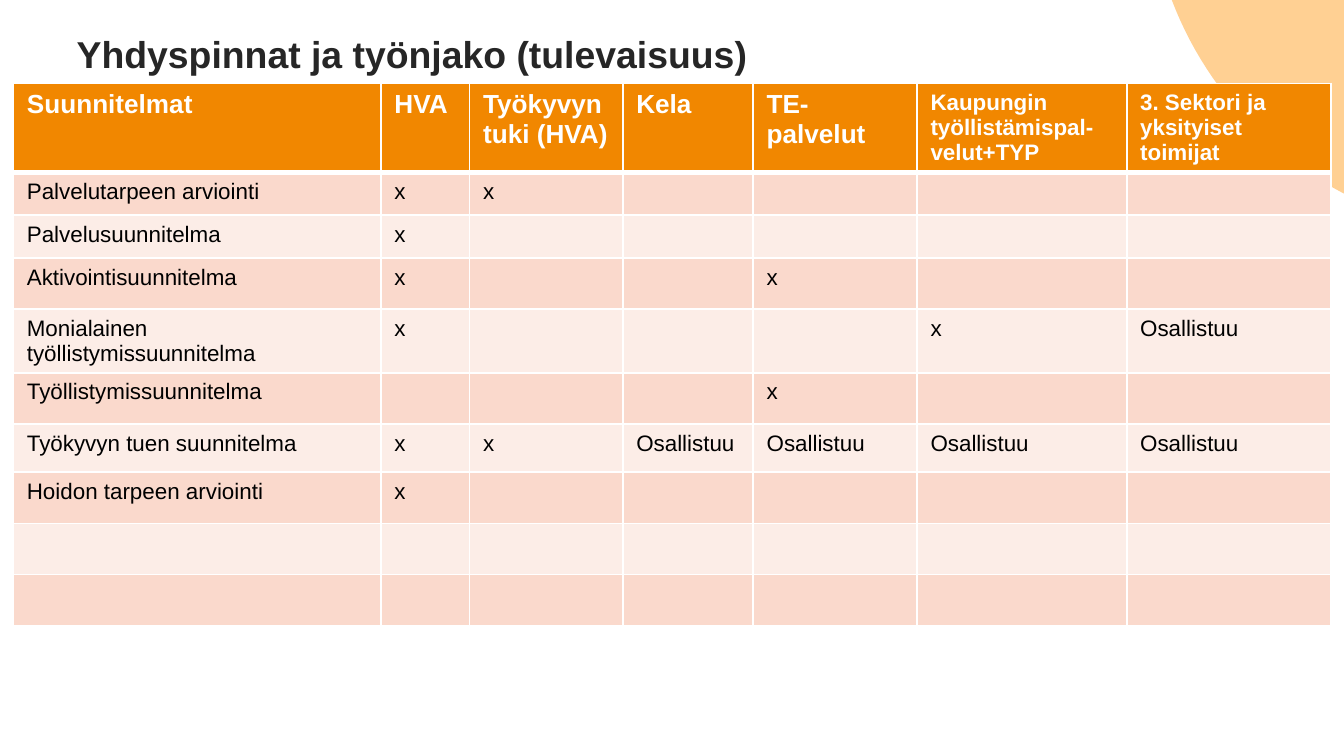
import math
from dataclasses import dataclass

import pptx
import pptx.dml.color
import pptx.enum.text
import pptx.oxml.ns
import pptx.util
from lxml import etree


@dataclass(frozen=True)
class Theme:
    font: str = "Arial"
    white: str = "FFFFFF"
    black: str = "000000"
    ink: str = "262626"
    head: str = "F18700"
    bands: tuple = ("FAD9CC", "FCEDE7")
    arc: str = "FFD093"
    title: int = 20
    large: int = 14
    body: int = 12


THEME = Theme()
COLS, ROWS = 100, 56.25  # grid units across and down a 16:9 slide
UNIT = pptx.util.Inches(0.1)

HEADS = ["Suunnitelmat", "HVA", "Työkyvyn tuki (HVA)", "Kela", "TE-palvelut",
         "Kaupungin työllistämispal-\nvelut+TYP",
         "3. Sektori ja yksityiset toimijat"]
SMALL = HEADS[5:]
JOIN = "Osallistuu"
PLANS = [
    ["Palvelutarpeen arviointi", "x", "x", "", "", "", ""],
    ["Palvelusuunnitelma", "x", "", "", "", "", ""],
    ["Aktivointisuunnitelma", "x", "", "", "x", "", ""],
    ["Monialainen työllistymissuunnitelma", "x", "", "", "", "x", JOIN],
    ["Työllistymissuunnitelma", "", "", "", "x", "", ""],
    ["Työkyvyn tuen suunnitelma", "x", "x", JOIN, JOIN, JOIN, JOIN],
    ["Hoidon tarpeen arviointi", "x", "", "", "", "", ""],
    [""] * len(HEADS),
    [""] * len(HEADS),
]
WIDTHS = [27.35, 6.6, 11.4, 9.7, 12.2, 15.6, 15.2]
HEIGHTS = [6.5, 3.2, 3.2, 3.8, 4.75, 3.8, 3.6, 3.8, 3.8, 3.8]


def grid(units):
    return round(units * UNIT)


def tint(code):
    return pptx.dml.color.RGBColor.from_string(code)


def write(frame, text, size=THEME.body, color=THEME.black, bold=False):
    frame.word_wrap = True
    for i, line in enumerate(text.split("\n")):
        para = frame.add_paragraph() if i else frame.paragraphs[0]
        para.alignment = pptx.enum.text.PP_ALIGN.LEFT
        if not line:
            # The end mark keeps an empty cell from growing its row
            etree.SubElement(para._p, pptx.oxml.ns.qn("a:endParaRPr"),
                             sz=str(size * 100))
            continue
        run = para.add_run()
        run.text = line
        run.font.name = THEME.font
        run.font.size = pptx.util.Pt(size)
        run.font.bold = bold
        run.font.color.rgb = tint(color)


def edge(cell, **sides):
    """Draw white borders; sides maps L, R, T and B to points."""
    props = cell._tc.get_or_add_tcPr()
    for side, width in sides.items():
        line = etree.SubElement(props, pptx.oxml.ns.qn(f"a:ln{side}"),
                                w=str(pptx.util.Pt(width)))
        fill = etree.SubElement(line, pptx.oxml.ns.qn("a:solidFill"))
        etree.SubElement(fill, pptx.oxml.ns.qn("a:srgbClr"), val=THEME.white)


class Page:
    def __init__(self, deck):
        self.slide = deck.slides.add_slide(deck.slide_layouts[5])
        self.shapes = self.slide.shapes

    def title(self, text, left, top, width, height):
        box = self.shapes.title
        box.left, box.top = grid(left), grid(top)
        box.width, box.height = grid(width), grid(height)
        frame = box.text_frame
        frame.vertical_anchor = pptx.enum.text.MSO_ANCHOR.BOTTOM
        write(frame, text, size=THEME.title, color=THEME.ink, bold=True)

    def arc(self, mid_x, mid_y, radius, steps=24):
        """Fill the part of a circle that shows in the top right corner."""
        first = math.pi - math.asin(-mid_y / radius)
        last = math.acos((COLS - mid_x) / radius)
        turns = [first + (last - first) * i / steps for i in range(steps + 1)]
        points = [(grid(mid_x + radius * math.cos(turn)),
                   grid(mid_y + radius * math.sin(turn))) for turn in turns]
        build = self.shapes.build_freeform(*points[0])
        build.add_line_segments(points[1:] + [(grid(COLS), 0)], close=True)
        shape = build.convert_to_shape()
        shape.shadow.inherit = False
        shape.fill.solid()
        shape.fill.fore_color.rgb = tint(THEME.arc)
        shape.line.fill.background()
        self.shapes._spTree.insert(2, shape._element)

    def table(self, left, top):
        table = self.shapes.add_table(
            len(HEIGHTS), len(WIDTHS), grid(left), grid(top),
            grid(sum(WIDTHS)), grid(sum(HEIGHTS))).table
        for col, width in zip(table.columns, WIDTHS):
            col.width = grid(width)
        for row, height in zip(table.rows, HEIGHTS):
            row.height = grid(height)
        for r, texts in enumerate([HEADS] + PLANS):
            for c, text in enumerate(texts):
                self.cell(table.cell(r, c), r, text)

    def cell(self, cell, row, text):
        edge(cell, L=1, R=1, T=3 if row == 1 else 1, B=1 if row else 3)
        cell.fill.solid()
        if row:
            cell.fill.fore_color.rgb = tint(THEME.bands[(row - 1) % 2])
            write(cell.text_frame, text)
        else:
            cell.fill.fore_color.rgb = tint(THEME.head)
            size = THEME.body if text in SMALL else THEME.large
            write(cell.text_frame, text, size=size, color=THEME.white,
                  bold=True)


def main():
    deck = pptx.Presentation()
    deck.slide_width, deck.slide_height = grid(COLS), grid(ROWS)
    page = Page(deck)
    page.arc(112.6, -9.7, 27.2)
    page.title("Yhdyspinnat ja työnjako (tulevaisuus)", 4.7, 1.25, 84.6, 4.9)
    page.table(1, 6.2)
    deck.save("out.pptx")


if __name__ == "__main__":
    main()
